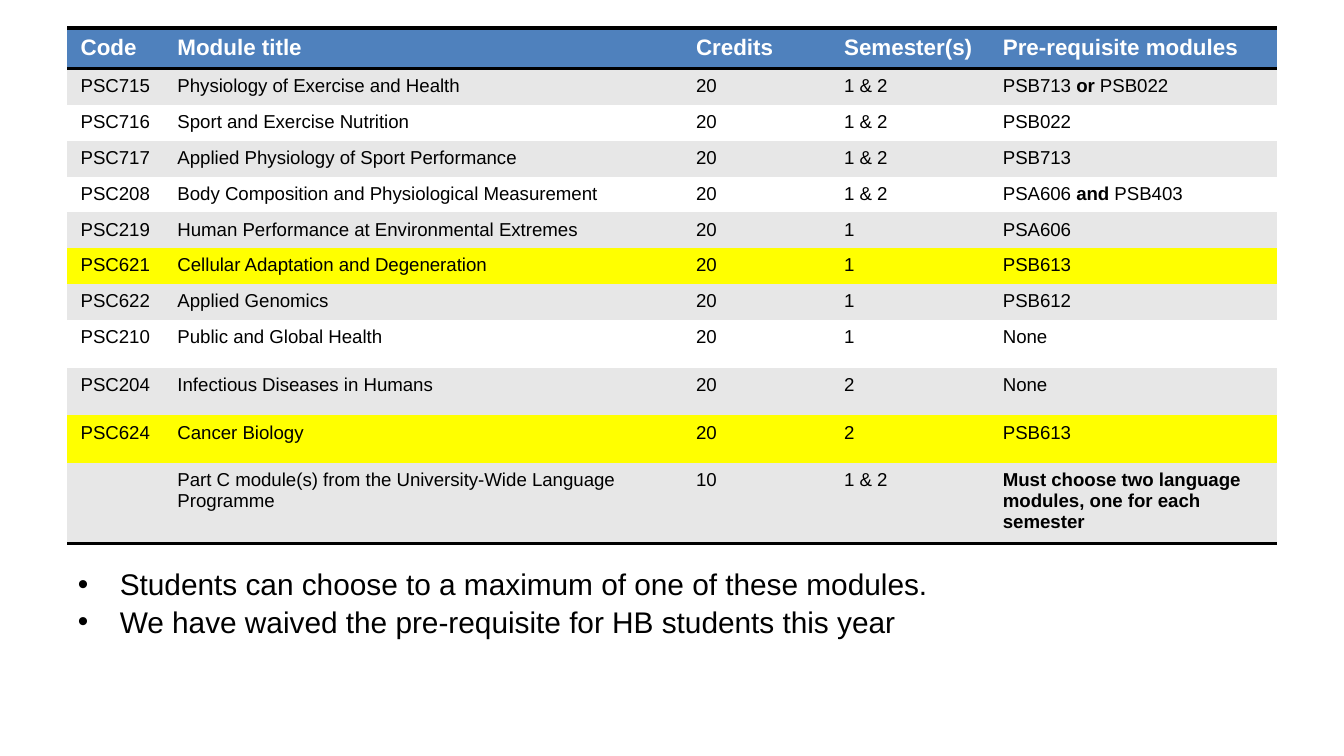
from dataclasses import dataclass

from lxml.etree import SubElement
from pptx import Presentation
from pptx.dml.color import RGBColor
from pptx.enum.text import MSO_AUTO_SIZE
from pptx.oxml import parse_xml
from pptx.oxml.ns import nsdecls, qn
from pptx.util import Cm, Pt

# Content: text between asterisks is bold
HEADER = ("Code", "Module title", "Credits", "Semester(s)", "Pre-requisite modules")
MODULES = [
    ("PSC715", "Physiology of Exercise and Health", "20", "1 & 2", "PSB713 *or* PSB022"),
    ("PSC716", "Sport and Exercise Nutrition", "20", "1 & 2", "PSB022"),
    ("PSC717", "Applied Physiology of Sport Performance", "20", "1 & 2", "PSB713"),
    ("PSC208", "Body Composition and Physiological Measurement", "20", "1 & 2",
     "PSA606 *and* PSB403"),
    ("PSC219", "Human Performance at Environmental Extremes", "20", "1", "PSA606"),
    ("PSC621", "Cellular Adaptation and Degeneration", "20", "1", "PSB613"),
    ("PSC622", "Applied Genomics", "20", "1", "PSB612"),
    ("PSC210", "Public and Global Health", "20", "1", "None"),
    ("PSC204", "Infectious Diseases in Humans", "20", "2", "None"),
    ("PSC624", "Cancer Biology", "20", "2", "PSB613"),
    ("", "Part C module(s) from the University-Wide Language Programme", "10", "1 & 2",
     "*Must choose two language modules, one for each semester*"),
]
HIGHLIGHTED = {"PSC621", "PSC624"}
NOTES = [
    "Students can choose to a maximum of one of these modules.",
    "We have waived the pre-requisite for HB students this year",
]

# Layout in centimetres
COLUMN_WIDTHS = (1.83, 9.8, 2.8, 3.0, 5.43)
HEADER_HEIGHT, SHORT_ROW, TALL_ROW, LAST_ROW = 0.77, 0.65, 0.9, 1.43
ROW_HEIGHTS = [HEADER_HEIGHT] + [SHORT_ROW] * 7 + [TALL_ROW] * 3 + [LAST_ROW]
NO_STYLE_NO_GRID = "{2D5ABB26-0587-4C30-8999-92F81FD0307C}"


@dataclass(frozen=True)
class Theme:
    font: str = "Arial"
    text: str = "000000"
    header_text: str = "FFFFFF"
    header_fill: str = "4F81BD"
    band: str = "E7E7E7"
    plain: str = "FFFFFF"
    highlight: str = "FFFF00"
    rule: str = "000000"
    rule_width: int = Pt(2)
    header_size: int = Pt(12)
    cell_size: int = Pt(10)
    note_size: int = Pt(16)


THEME = Theme()


def format_run(run, size, color, bold=False):
    run.font.name = THEME.font
    run.font.size = size
    run.font.bold = bold
    run.font.color.rgb = RGBColor.from_string(color)


def write_cell(cell, text, fill, size, color, all_bold=False):
    cell.fill.solid()
    cell.fill.fore_color.rgb = RGBColor.from_string(fill)
    paragraph = cell.text_frame.paragraphs[0]
    for index, part in enumerate(text.split("*")):
        if part:
            run = paragraph.add_run()
            run.text = part
            format_run(run, size, color, all_bold or index % 2 == 1)


def add_rule(cell, side):
    """Draw a horizontal rule on side T (top) or B (bottom)."""
    line = parse_xml(
        f'<a:ln{side} {nsdecls("a")} w="{THEME.rule_width}"><a:solidFill>'
        f'<a:srgbClr val="{THEME.rule}"/></a:solidFill></a:ln{side}>')
    cell._tc.get_or_add_tcPr().insert(0, line)


def row_fill(index, code):
    if code in HIGHLIGHTED:
        return THEME.highlight
    return THEME.plain if index % 2 else THEME.band


def add_module_table(slide):
    frame = slide.shapes.add_table(
        len(ROW_HEIGHTS), len(COLUMN_WIDTHS), Cm(1.27), Cm(0.53),
        Cm(sum(COLUMN_WIDTHS)), Cm(sum(ROW_HEIGHTS)))
    table = frame.table
    table.first_row = table.horz_banding = False
    table._tbl.tblPr.find(qn("a:tableStyleId")).text = NO_STYLE_NO_GRID
    for column, width in zip(table.columns, COLUMN_WIDTHS):
        column.width = Cm(width)
    for row, height in zip(table.rows, ROW_HEIGHTS):
        row.height = Cm(height)

    # Header, then module rows
    for column, title in enumerate(HEADER):
        write_cell(table.cell(0, column), title, THEME.header_fill,
                   THEME.header_size, THEME.header_text, all_bold=True)
    for index, module in enumerate(MODULES):
        for column, text in enumerate(module):
            write_cell(table.cell(index + 1, column), text, row_fill(index, module[0]),
                       THEME.cell_size, THEME.text)

    # Rules around the header and under the last row
    for column in range(len(HEADER)):
        add_rule(table.cell(0, column), "B")
        add_rule(table.cell(0, column), "T")
        add_rule(table.cell(len(MODULES), column), "B")


def fill_notes(body):
    body.left, body.top, body.width, body.height = Cm(1.22), Cm(10.54), Cm(22.86), Cm(1.63)
    frame = body.text_frame
    frame.text = "\n".join(NOTES)
    frame.word_wrap = True
    frame.auto_size = MSO_AUTO_SIZE.SHAPE_TO_FIT_TEXT
    for paragraph in frame.paragraphs:
        properties = paragraph._p.get_or_add_pPr()
        properties.set("marL", str(Cm(0.79)))
        properties.set("indent", str(-Cm(0.79)))
        SubElement(properties, qn("a:buFont"), typeface=THEME.font)
        SubElement(properties, qn("a:buChar"), char="•")
        paragraph.space_before = Pt(0)
        paragraph.line_spacing = 1.05
        format_run(paragraph.runs[0], THEME.note_size, THEME.text)


def main():
    presentation = Presentation()
    presentation.slide_width, presentation.slide_height = Cm(25.4), Cm(14.29)
    slide = presentation.slides.add_slide(presentation.slide_layouts[1])
    title = slide.shapes.title
    title.element.getparent().remove(title.element)
    add_module_table(slide)
    fill_notes(slide.placeholders[1])
    presentation.save("out.pptx")


if __name__ == "__main__":
    main()
